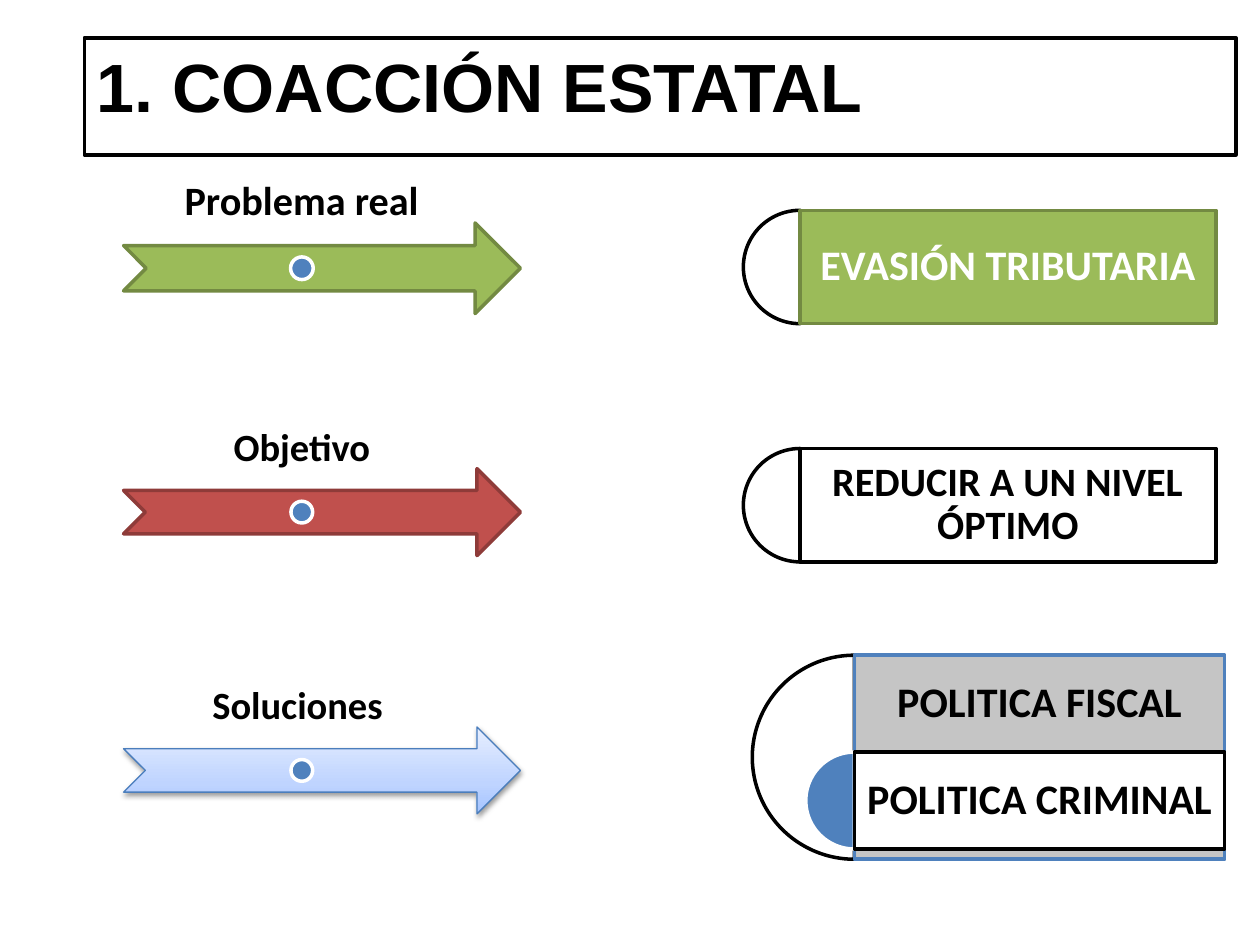
from copy import deepcopy
from dataclasses import dataclass

from lxml import etree
from pptx import Presentation
from pptx.dml.color import RGBColor
from pptx.enum import shapes, text
from pptx.oxml import ns
from pptx.util import Pt


@dataclass
class Theme:
    black: str = "000000"
    white: str = "FFFFFF"
    green: str = "9BBB59"
    dark_green: str = "738A42"
    red: str = "C0504D"
    dark_red: str = "8E3B39"
    blue: str = "4F81BD"
    edge_blue: str = "4B7EBC"
    grey: str = "BFBFBF"
    sky: tuple = ((0, "A4C4FF"), (0.35, "BFD4FF"), (1, "E6EEFF"))
    title: int = 39
    large: int = 24
    medium: int = 23
    small: int = 22


T = Theme()
SHAPE = shapes.MSO_SHAPE
ANCHOR = text.MSO_ANCHOR
ALIGN = text.PP_ALIGN

prs = Presentation()
prs.slide_width, prs.slide_height = Pt(720), Pt(540)
s = prs.slides.add_slide(prs.slide_layouts[6])


def add_block(kind, x, y, w, h, fill, line, weight=2):
    sp = s.shapes.add_shape(kind, Pt(x), Pt(y), Pt(w), Pt(h))
    sp.shadow.inherit = False
    if isinstance(fill, tuple):
        sp.fill.gradient()
        sp.fill.gradient_angle = 90
        stops = sp._element.spPr.find(".//" + ns.qn("a:gsLst"))
        stops.append(deepcopy(stops[0]))
        for stop, (position, color) in zip(sp.fill.gradient_stops, fill):
            stop.position = position
            stop.color.rgb = RGBColor.from_string(color)
    else:
        sp.fill.solid()
        sp.fill.fore_color.rgb = RGBColor.from_string(fill)
    sp.line.color.rgb = RGBColor.from_string(line)
    sp.line.width = Pt(weight)
    return sp


def write(sp, words, size, color, inset, anchor=ANCHOR.MIDDLE, align=ALIGN.CENTER,
          font="Calibri", spacing=0.9, **frame):
    tf = sp.text_frame
    sides = ("left", "top", "right", "bottom")
    settings = {"word_wrap": True, "vertical_anchor": anchor}
    settings.update({f"margin_{side}": Pt(m) for side, m in zip(sides, inset)})
    settings.update(frame)
    for name, value in settings.items():
        setattr(tf, name, value)
    p = tf.paragraphs[0]
    p.alignment, p.line_spacing = align, spacing
    r = p.add_run()
    r.text = words
    for name, value in {"name": font, "size": Pt(size), "bold": True}.items():
        setattr(r.font, name, value)
    r.font.color.rgb = RGBColor.from_string(color)


# Boxes with a half disc on the left: left, top, width, height, colours, text
boxes = [
    (457.2, 120.2, 237.6, 64.8, T.green, T.dark_green, T.white, T.black,
     "EVASIÓN TRIBUTARIA", T.white, T.large),
    (457.2, 256.3, 237.6, 64.8, T.white, T.black, T.white, T.black,
     "REDUCIR A UN NIVEL ÓPTIMO", T.black, T.medium),
    (488.2, 374.4, 211.7, 116.6, T.grey, T.blue, T.white, T.black,
     "POLITICA FISCAL", T.black, T.large),
    (488.2, 429.8, 211.7, 55.4, T.white, T.black, T.blue, T.white,
     "POLITICA CRIMINAL", T.black, T.large),
]
for x, y, w, h, fill, line, disc_fill, disc_line, words, color, size in boxes:
    disc = add_block(SHAPE.PIE, x - h / 2, y, h, h, disc_fill, disc_line)
    disc.adjustments[0], disc.adjustments[1] = 54, 162  # 90 to 270 degrees
    box = add_block(SHAPE.RECTANGLE, x, y, w, h, fill, line)
    bottom = 7.2
    if fill == T.grey:
        bottom += h - 55.4  # keeps the text above the inner box
        tint = box._element.spPr.find(ns.qn("a:solidFill"))[0]
        etree.SubElement(tint, ns.qn("a:alpha"), val="90000")
    write(box, words, size, color, (7.2, 7.2, 7.2, bottom))

# Arrows, each with a label above and a dot in the middle of the label width
ARROW_X, ARROW_W, LABEL_W = 70.6, 226.8, 203.8
arrows = [
    (415.4, 49.7, T.sky, T.edge_blue, 0.75, "Soluciones ", T.small),
    (127.4, 51.8, T.green, T.dark_green, 2, "Problema real", T.medium),
    (267.8, 49.7, T.red, T.dark_red, 2, "Objetivo", T.small),
]
for y, h, fill, line, weight, words, size in arrows:
    arrow = add_block(SHAPE.NOTCHED_RIGHT_ARROW, ARROW_X, y, ARROW_W, h, fill, line, weight)
    if fill == T.sky:
        effects = arrow._element.spPr.find(ns.qn("a:effectLst"))
        shadow = etree.SubElement(effects, ns.qn("a:outerShdw"), blurRad=str(Pt(3.1)),
                                  dist=str(Pt(1.6)), dir="5400000", rotWithShape="0")
        tint = etree.SubElement(shadow, ns.qn("a:srgbClr"), val=T.black)
        etree.SubElement(tint, ns.qn("a:alpha"), val="38000")
    label = s.shapes.add_textbox(Pt(ARROW_X), Pt(y - 0.75 * h), Pt(LABEL_W), Pt(h))
    write(label, words, size, T.black, [h / 4] * 4, ANCHOR.BOTTOM)
    dot = h / 4
    add_block(SHAPE.OVAL, ARROW_X + (LABEL_W - dot) / 2, y + (h - dot) / 2, dot, dot,
              T.blue, T.white)

# Title
title = add_block(SHAPE.RECTANGLE, 48.2, 21.6, 658.1, 67, T.white, T.black)
write(title, "1. COACCIÓN ESTATAL", T.title, T.black, (7.2, 3.6, 7.2, 3.6),
      ANCHOR.TOP, ALIGN.LEFT, "Arial", 1.0)

prs.save("out.pptx")
